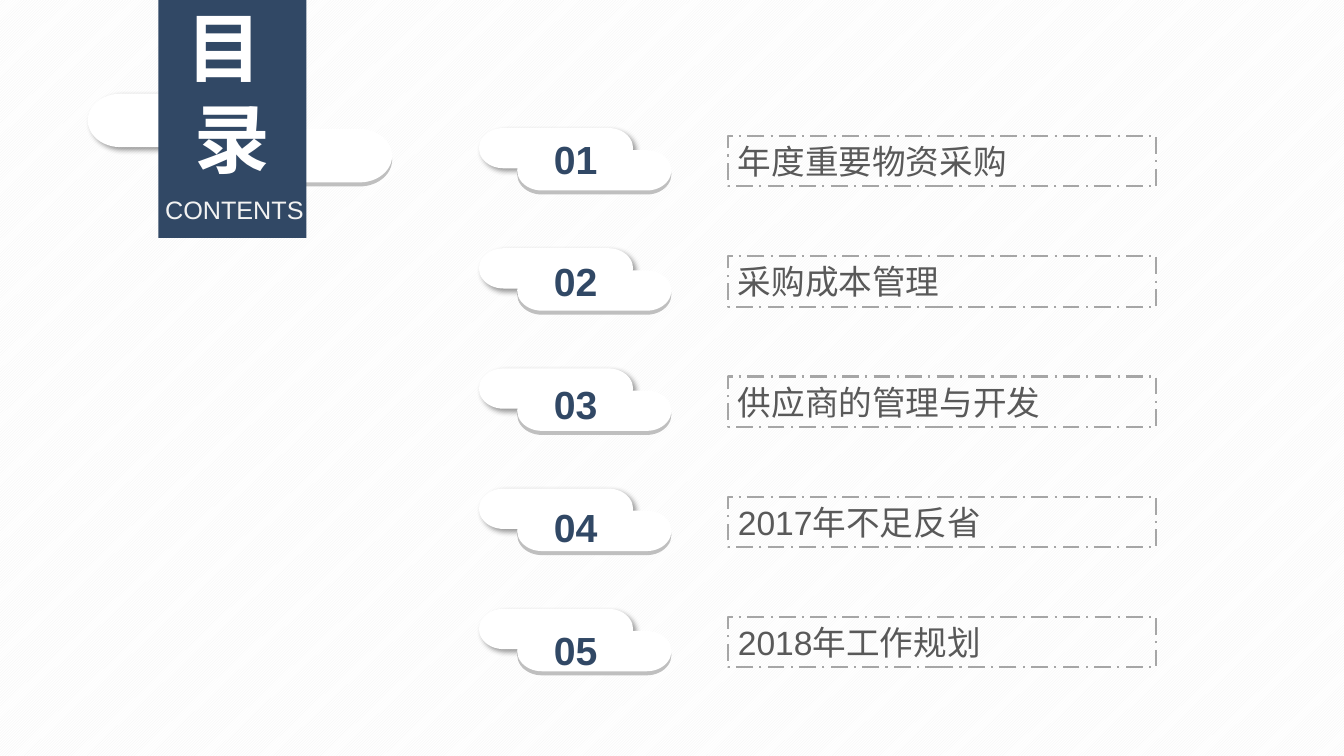
from lxml import etree
from pptx import Presentation
from pptx import util as u
from pptx.dml.color import RGBColor
from pptx.enum import dml, shapes, text
from pptx.oxml.ns import qn

W, H = 13.33, 7.5
NAVY, WHITE, PALE, SILVER = "314865", "FFFFFF", "F2F2F2", "BFBFBF"
TOPICS = ["年度重要物资采购", "采购成本管理", "供应商的管理与开发", "2017年不足反省", "2018年工作规划"]
TOP, ROW_PITCH, NUMBER_PITCH = 1.27, 1.1925, 1.2175


def color(value):
    """Return the RGB colour for a hex string."""
    return RGBColor.from_string(value)


def add_shape(parent, kind, box, fill=None):
    """Add a borderless preset shape, filled or clear."""
    sp = parent.add_shape(kind, *map(u.Inches, box))
    sp.shadow.inherit = False
    sp.line.fill.background()
    if fill:
        sp.fill.solid()
        sp.fill.fore_color.rgb = color(fill)
    else:
        sp.fill.background()
    return sp


def write(sp, lines, size, ink, align, bold=False, inset=True, anchor=text.MSO_ANCHOR.TOP):
    """Fill a shape with equally formatted paragraphs."""
    tf = sp.text_frame
    tf.word_wrap = True
    tf.auto_size = text.MSO_AUTO_SIZE.SHAPE_TO_FIT_TEXT
    tf.vertical_anchor = anchor
    if not inset:
        tf.margin_left = tf.margin_right = tf.margin_top = tf.margin_bottom = 0
    tf.text = "\n".join(lines)
    for p in tf.paragraphs:
        p.alignment = align
        p.font.name, p.font.size, p.font.bold = "Arial", u.Pt(size), bold
        p.font.color.rgb = color(ink)


def add_text(parent, box, lines, size, ink, **options):
    """Add a centred text box."""
    tb = parent.add_textbox(*map(u.Inches, box))
    write(tb, lines, size, ink, text.PP_ALIGN.CENTER, **options)


def cast_shadow(sp):
    """Give a shape a soft shadow to the lower right."""
    effects = sp._element.spPr.find(qn("a:effectLst"))
    shadow = etree.SubElement(effects, qn("a:outerShdw"), blurRad=str(u.Pt(4)),
                              dist=str(u.Pt(3)), dir="2700000", algn="tl", rotWithShape="0")
    black = etree.SubElement(shadow, qn("a:srgbClr"), val="000000")
    etree.SubElement(black, qn("a:alpha"), val="40000")


def add_cloud(s, box, pill_w, pill_h):
    """Group two overlapping pills and a grey lower edge in a box."""
    x, y, w, h = box
    right, bottom = x + w - pill_w, y + h - pill_h
    group = s.shapes.add_group_shape().shapes
    pill = shapes.MSO_SHAPE.FLOWCHART_TERMINATOR
    add_shape(group, pill, (right, bottom, pill_w, pill_h), SILVER)
    cast_shadow(add_shape(group, pill, (x, y, pill_w, pill_h), WHITE))
    add_shape(group, pill, (right, bottom - 0.04, pill_w, pill_h), WHITE)
    return group


def add_title(s, box):
    """Place the hanging contents banner over its cloud."""
    x, y, w, h = box
    middle = text.MSO_ANCHOR.MIDDLE
    add_cloud(s, (x - 0.7, y + 0.93, 3.02, 0.92), 2.01, 0.53)
    add_shape(s.shapes, shapes.MSO_SHAPE.RECTANGLE, box, NAVY)
    add_text(s.shapes, (x, y, w, 0.77 * h), ["目 ", "录"], 54, WHITE,
             bold=True, inset=False, anchor=middle)
    add_text(s.shapes, (x + 0.02, y + 1.93, w, 0.3), ["CONTENTS"], 18, PALE,
             inset=False, anchor=middle)


def add_topic(s, box):
    """Return a dash-dot frame for one topic."""
    sp = add_shape(s.shapes, shapes.MSO_SHAPE.RECTANGLE, box)
    sp.line.color.rgb = color("A6A6A6")
    sp.line.width = u.Pt(1.5)
    sp.line.dash_style = dml.MSO_LINE.LONG_DASH_DOT
    return sp


def add_agenda(s, box):
    """Lay out the numbered topics in equal rows."""
    x, y, w, h = box
    for i, topic in enumerate(TOPICS):
        top = y + i * ROW_PITCH
        frame = add_topic(s, (x + 2.47, top + 0.08, w - 2.47, 0.5))
        write(frame, [topic], 24, "595959", text.PP_ALIGN.JUSTIFY)
        cloud = add_cloud(s, (x, top, 1.91, 0.66), 1.53, 0.4)
        add_text(cloud, (x + 0.58, y + 0.02 + i * NUMBER_PITCH, 0.76, 0.57),
                 [f"{i + 1:02}"], 28, NAVY, bold=True)


def main():
    """Build and save the contents slide."""
    prs = Presentation()
    prs.slide_width, prs.slide_height = u.Inches(W), u.Inches(H)
    s = prs.slides.add_slide(prs.slide_layouts[6])
    fill = s.background.fill
    fill.patterned()
    fill.pattern = dml.MSO_PATTERN.LIGHT_UPWARD_DIAGONAL
    fill.fore_color.rgb, fill.back_color.rgb = color(PALE), color(WHITE)
    add_title(s, (1.57, 0, 1.47, 2.36))
    add_agenda(s, (4.75, TOP, 6.72, 5.43))
    prs.save("out.pptx")


if __name__ == "__main__":
    main()
